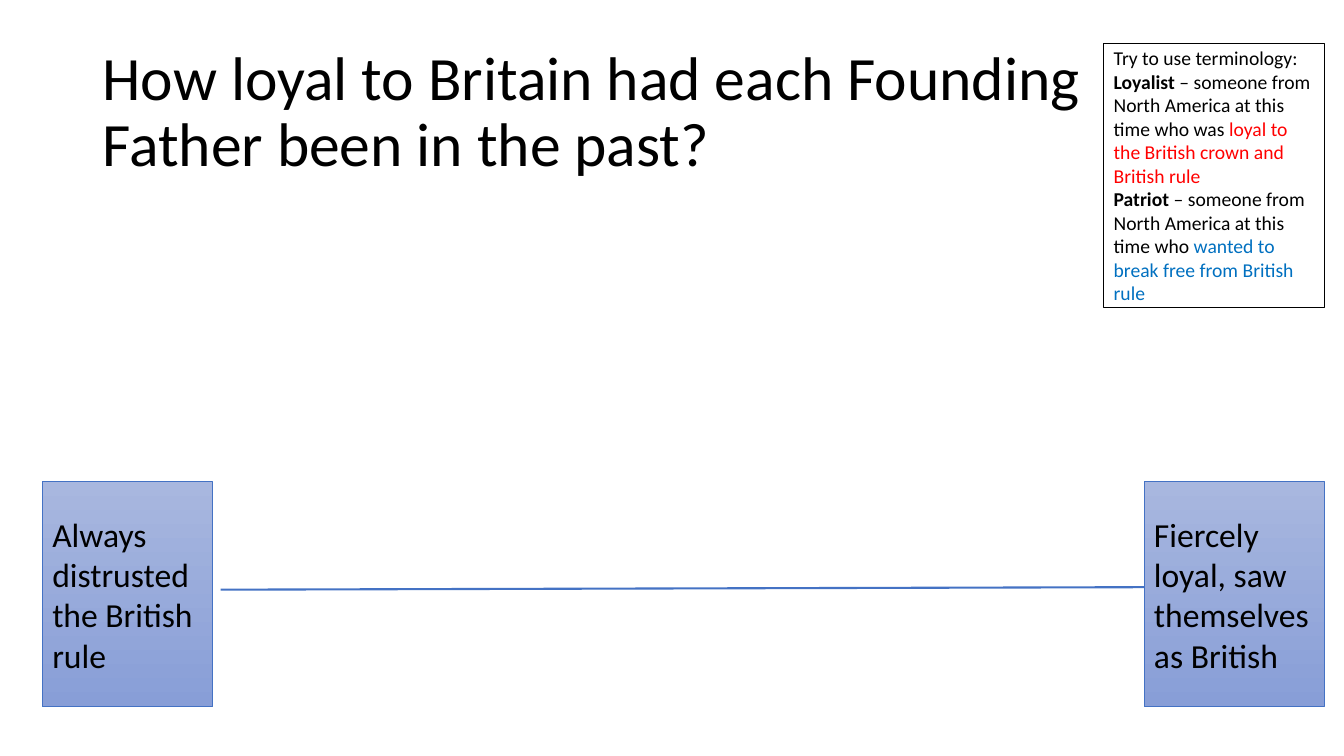
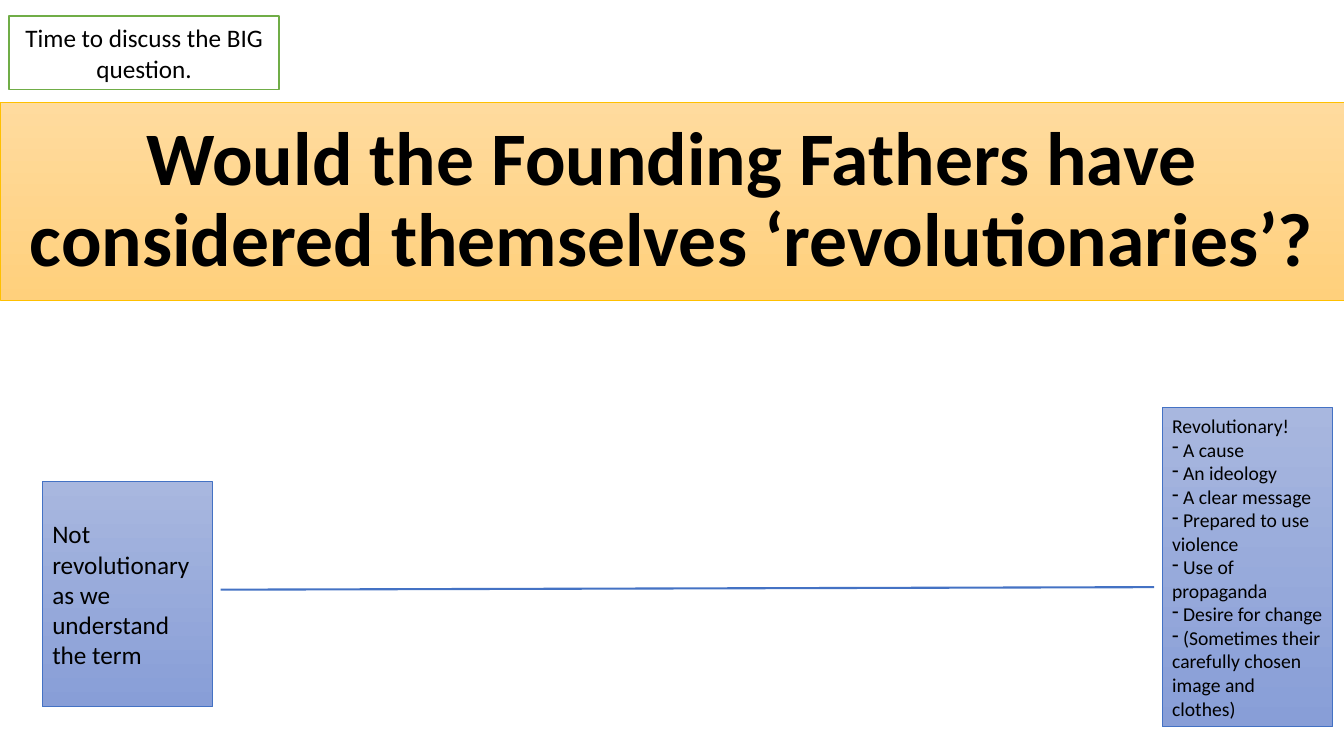
from lxml import etree
from pptx import Presentation
from pptx.dml.color import RGBColor
from pptx.enum import shapes, text
from pptx.oxml import ns
from pptx.util import Pt

BLACK = RGBColor(0x00, 0x00, 0x00)
WHITE = RGBColor(0xFF, 0xFF, 0xFF)
RED = RGBColor(0xFF, 0x00, 0x00)
BLUE = RGBColor(0x00, 0x70, 0xC0)
GREEN = RGBColor(0x70, 0xAD, 0x47)
GOLD = RGBColor(0xFF, 0xC0, 0x00)
SCALE_BLUE = RGBColor(0x44, 0x72, 0xC4)
BLUE_FADE = (RGBColor(0xA8, 0xB7, 0xDF), RGBColor(0x88, 0x9E, 0xD7))
GOLD_FADE = (RGBColor(0xFF, 0xDB, 0x9E), RGBColor(0xFF, 0xD0, 0x7C))
FONT = "Calibri"
LEFT, CENTER = text.PP_ALIGN.LEFT, text.PP_ALIGN.CENTER


def write(shape, paragraphs, size=18, bold=False, align=LEFT, spacing=1.0, dashed_from=None):
    frame = shape.text_frame
    frame.word_wrap = True
    frame.auto_size = text.MSO_AUTO_SIZE.NONE
    frame.vertical_anchor = text.MSO_ANCHOR.MIDDLE
    for number, runs in enumerate(paragraphs):
        paragraph = frame.add_paragraph() if number else frame.paragraphs[0]
        paragraph.alignment = align
        paragraph.line_spacing = spacing
        if dashed_from is not None and number >= dashed_from:
            properties = paragraph._p.get_or_add_pPr()
            properties.set("marL", "0")
            properties.set("indent", "0")
            etree.SubElement(properties, ns.qn("a:buChar")).set("char", "-")
        for words, color, strong in [(runs, BLACK, bold)] if isinstance(runs, str) else runs:
            run = paragraph.add_run()
            run.text = words
            run.font.name = FONT
            run.font.size = Pt(size)
            run.font.bold = strong
            run.font.color.rgb = color


def paint(shape, fill, line, width):
    if isinstance(fill, RGBColor):
        shape.fill.solid()
        shape.fill.fore_color.rgb = fill
    else:
        shape.fill.gradient()
        shape.fill.gradient_angle = 270
        for stop, color in zip(shape.fill.gradient_stops, fill):
            stop.color.rgb = color
    shape.line.color.rgb = line
    shape.line.width = Pt(width)


deck = Presentation()
deck.slide_width, deck.slide_height = Pt(960), Pt(540)

terminology = [
    [("Try to use terminology: ", BLACK, False),
     ("Loyalist", BLACK, True),
     (" – someone from North America at this time who was ", BLACK, False),
     ("loyal to the British crown and British rule", RED, False)],
    [("Patriot", BLACK, True),
     (" – someone from North America at this time who ", BLACK, False),
     ("wanted to break free from British rule", BLUE, False)],
]
revolutionary_traits = [
    "Revolutionary!", " A cause", " An ideology", " A clear message",
    " Prepared to use violence", " Use of propaganda", " Desire for change",
    " (Sometimes their carefully chosen image and clothes)",
]
low_end = (30.24, 344.16, 121.68, 160.56)

discussions = [
    {
        "question": "How loyal to Britain had each Founding Father been in the past?",
        "question_at": (66, 28.75, 828, 104.4),
        "question_format": {"size": 44},
        "band": None,
        "boxes": [
            ((817.2, 344.16, 128.88, 160.56), (BLUE_FADE, SCALE_BLUE, 0.5),
             ["Fiercely loyal, saw themselves as British"], {"size": 24}),
            (low_end, (BLUE_FADE, SCALE_BLUE, 0.5),
             ["Always distrusted the British rule"], {"size": 24}),
            ((788.4, 30.96, 157.68, 188.64), (WHITE, BLACK, 1),
             terminology, {"size": 14}),
        ],
    },
    {
        "question": "Would the Founding Fathers have considered themselves ‘revolutionaries’?",
        "question_at": (0, 73.44, 960, 141.12),
        "question_format": {"size": 54, "bold": True, "align": CENTER},
        "band": (GOLD_FADE, GOLD, 0.5),
        "boxes": [
            ((830.16, 290.88, 121.68, 228.24), (BLUE_FADE, SCALE_BLUE, 0.5),
             revolutionary_traits, {"size": 14, "dashed_from": 1}),
            (low_end, (BLUE_FADE, SCALE_BLUE, 0.5),
             ["Not revolutionary as we understand the term"], {"size": 18}),
            ((6.48, 11.52, 192.96, 52.56), (WHITE, GREEN, 1),
             ["Time to discuss the BIG question."], {"size": 18, "align": CENTER}),
        ],
    },
]

for discussion in discussions:
    slide = deck.slides.add_slide(deck.slide_layouts[5])
    question = slide.shapes.title
    question.left, question.top, question.width, question.height = map(Pt, discussion["question_at"])
    write(question, [discussion["question"]], spacing=0.9, **discussion["question_format"])
    if discussion["band"]:
        paint(question, *discussion["band"])

    opinion_scale = slide.shapes.add_connector(
        shapes.MSO_CONNECTOR.STRAIGHT, Pt(157.68), Pt(421.2), Pt(824.4), Pt(419.4))
    opinion_scale.line.color.rgb = SCALE_BLUE
    opinion_scale.line.width = Pt(1.5)
    etree.SubElement(opinion_scale._element.spPr, ns.qn("a:effectLst"))

    for place, look, paragraphs, text_format in discussion["boxes"]:
        box = slide.shapes.add_shape(shapes.MSO_SHAPE.RECTANGLE, *map(Pt, place))
        box.shadow.inherit = False
        paint(box, *look)
        write(box, paragraphs, **text_format)

deck.save("out.pptx")
